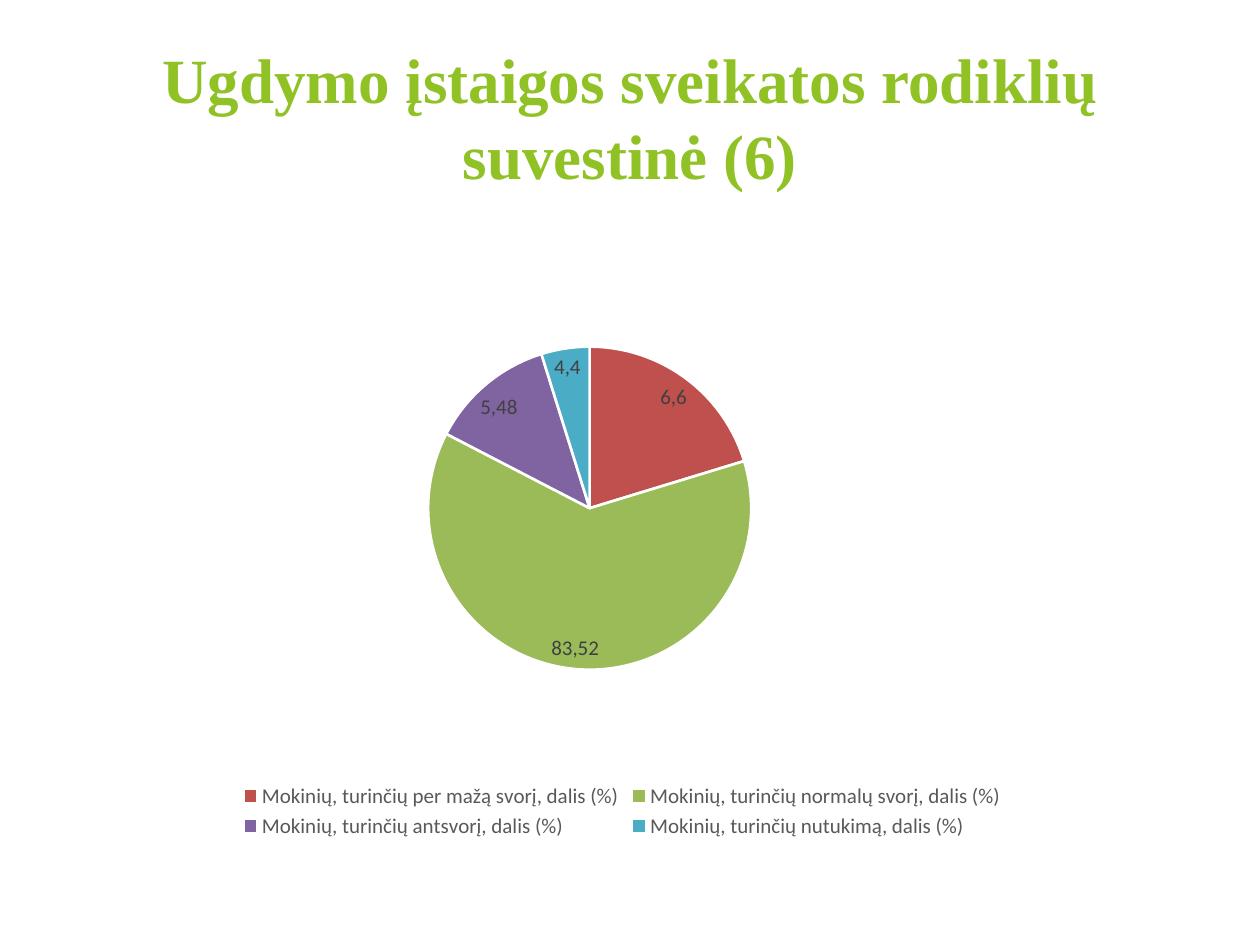
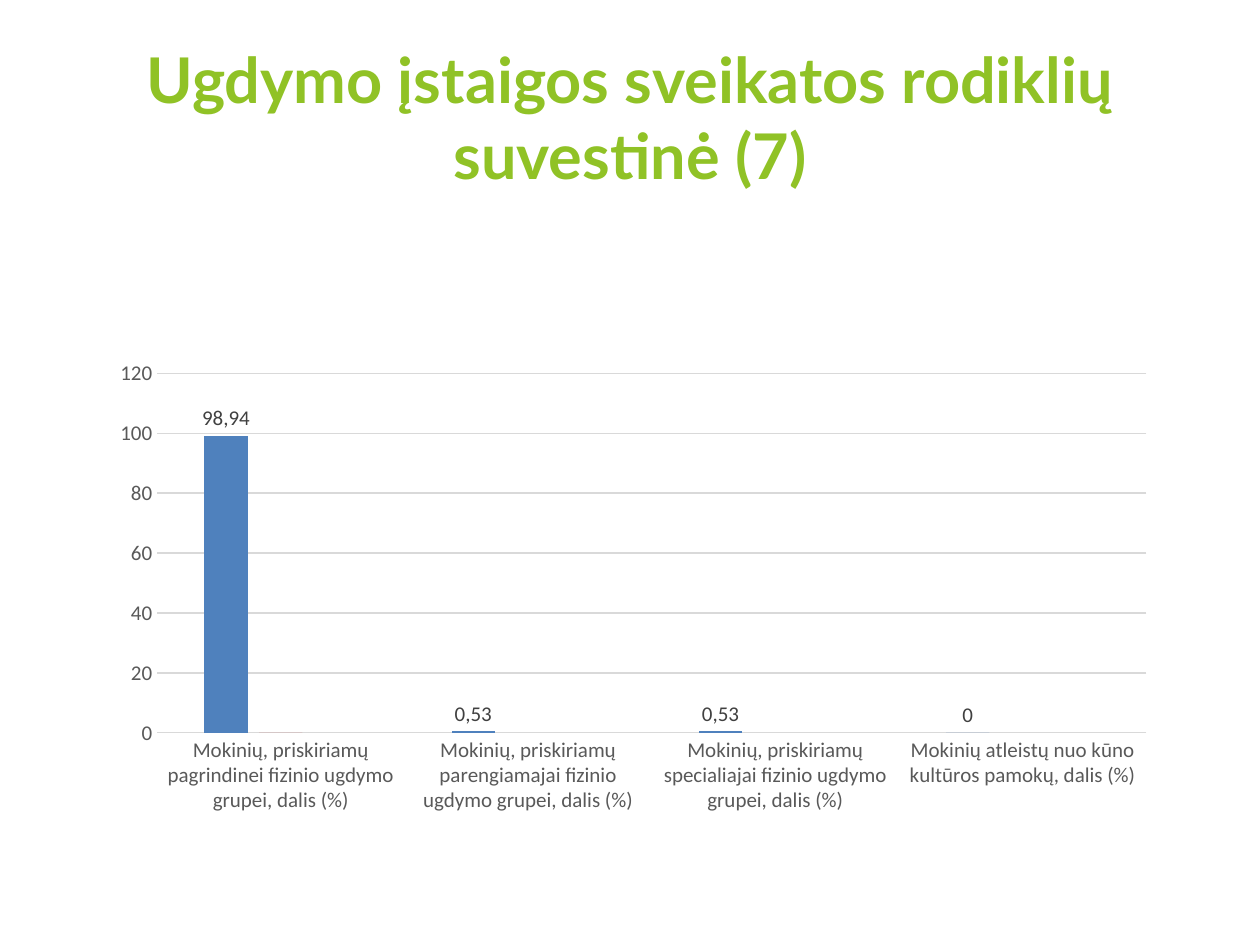
from lxml.etree import SubElement
from pptx import Presentation
from pptx.chart.data import CategoryChartData
from pptx.dml.color import RGBColor
from pptx.enum.chart import XL_CHART_TYPE, XL_LABEL_POSITION, XL_LEGEND_POSITION, XL_TICK_MARK
from pptx.enum.text import MSO_ANCHOR, PP_ALIGN
from pptx.oxml.ns import qn
from pptx.util import Pt

GREEN, WHITE, GRID = "90C226", "FFFFFF", "D9D9D9"
LABEL_TEXT, AXIS_TEXT = "404040", "595959"
BLUE, RED, OLIVE, PURPLE, TEAL = "4F81BD", "C0504D", "9BBB59", "8064A2", "4BACC6"


def color(value):
    return RGBColor.from_string(value)


def set_font(font, name, size, value, bold=False):
    font.name, font.size, font.bold = name, Pt(size), bold
    font.color.rgb = color(value)


presentation = Presentation()
presentation.slide_width, presentation.slide_height = Pt(720), Pt(540)

# Chart data; the pie starts with an empty category
pie_data = CategoryChartData()
pie_data.categories = [""] + [
    f"Mokinių, turinčių {group}, dalis (%)"
    for group in ("per mažą svorį", "normalų svorį", "antsvorį", "nutukimą")
]
pie_data.add_series("Series 1", (None, 20.29, 62.32, 12.56, 4.83))

column_data = CategoryChartData()
column_data.categories = [
    f"Mokinių, priskiriamų {group} fizinio ugdymo grupei, dalis (%)"
    for group in ("pagrindinei", "parengiamajai", "specialiajai")
] + ["Mokinių atleistų nuo kūno kultūros pamokų, dalis (%)"]
column_data.add_series("Series 1", (99.03, 0.48, 0.48, 0))
column_data.add_series("Series 2", (0, None, None, None))
column_data.add_series("Series 3", (None, None, None, None))

# Number, title font, chart type, data, frame, plot area, label position, labels
pages = [
    (6, "Times New Roman", XL_CHART_TYPE.PIE, pie_data,
     (54, 176.7, 603.4, 305.3), (0.316, 0.034, 0.306, 0.677),
     XL_LABEL_POSITION.BEST_FIT, {1: "6,6", 2: "83,52", 3: "5,48", 4: "4,4"}),
    (7, "Lato", XL_CHART_TYPE.COLUMN_CLUSTERED, column_data,
     (54, 171.2, 676.1, 303.1), (0.053, 0.139, 0.836, 0.678),
     XL_LABEL_POSITION.OUTSIDE_END, {0: "98,94", 1: "0,53", 2: "0,53"}),
]

charts = []
for number, title_font, chart_type, data, frame, plot_area, position, labels in pages:
    slide = presentation.slides.add_slide(presentation.slide_layouts[6])

    # Title
    title = slide.shapes.add_textbox(Pt(36), Pt(21.6), Pt(648), Pt(90)).text_frame
    title.word_wrap = True
    title.vertical_anchor = MSO_ANCHOR.MIDDLE
    paragraph = title.paragraphs[0]
    paragraph.text = f"Ugdymo įstaigos sveikatos rodiklių suvestinė ({number})"
    paragraph.alignment = PP_ALIGN.CENTER
    set_font(paragraph.font, title_font, 36, GREEN, bold=True)

    # Chart
    chart = slide.shapes.add_chart(chart_type, *map(Pt, frame), data).chart
    chart.has_title = False
    chart.has_legend = False
    set_font(chart.font, "Calibri", 12, AXIS_TEXT)
    charts.append(chart)

    # Fixed place of the plot inside the chart
    plot_element = chart._chartSpace.chart.plotArea
    for old_layout in plot_element.findall(qn("c:layout")):
        plot_element.remove(old_layout)
    layout = SubElement(plot_element, qn("c:layout"))
    plot_element.insert(0, layout)
    manual = SubElement(layout, qn("c:manualLayout"))
    settings = [("layoutTarget", "inner"), ("xMode", "edge"), ("yMode", "edge")]
    settings += zip("xywh", map(str, plot_area))
    for tag, value in settings:
        SubElement(manual, qn(f"c:{tag}")).set("val", value)

    # Value labels, with their own wording where given
    series = chart.plots[0].series[0]
    data_labels = series.data_labels
    data_labels.show_value = True
    data_labels.position = position
    set_font(data_labels.font, "Calibri", 12, LABEL_TEXT)
    for index, text in labels.items():
        label = series.points[index].data_label
        label_paragraph = label.text_frame.paragraphs[0]
        label_paragraph.text = text
        set_font(label_paragraph.font, "Calibri", 12, LABEL_TEXT)
        label.position = position

pie_chart, column_chart = charts

# Pie: slice colours
pie_chart.plots[0].vary_by_categories = True
for index, value in enumerate((BLUE, RED, OLIVE, PURPLE, TEAL)):
    slice_format = pie_chart.plots[0].series[0].points[index].format
    slice_format.fill.solid()
    slice_format.fill.fore_color.rgb = color(value)
    slice_format.line.color.rgb = color(WHITE)
    slice_format.line.width = Pt(1.5)

# Pie: legend without the empty category
pie_chart.has_legend = True
legend = pie_chart.legend
legend.position = XL_LEGEND_POSITION.BOTTOM
legend.include_in_layout = False
set_font(legend.font, "Calibri", 12, AXIS_TEXT)
empty_entry = SubElement(legend._element, qn("c:legendEntry"))
SubElement(empty_entry, qn("c:idx")).set("val", "0")
SubElement(empty_entry, qn("c:delete")).set("val", "1")
legend._element.find(qn("c:legendPos")).addnext(empty_entry)

# Columns: series colours and spacing
column_plot = column_chart.plots[0]
column_plot.vary_by_categories = False
column_plot.gap_width, column_plot.overlap = 219, -27
for series, value in zip(column_plot.series, (BLUE, RED, OLIVE)):
    series.format.fill.solid()
    series.format.fill.fore_color.rgb = color(value)

# Columns: axes and grid
value_axis, category_axis = column_chart.value_axis, column_chart.category_axis
for axis in (value_axis, category_axis):
    axis.major_tick_mark = axis.minor_tick_mark = XL_TICK_MARK.NONE
    set_font(axis.tick_labels.font, "Calibri", 12, AXIS_TEXT)
value_axis.minimum_scale, value_axis.maximum_scale, value_axis.major_unit = 0, 120, 20
value_axis.format.line.fill.background()
value_axis.has_major_gridlines = True
for line in (category_axis.format.line, value_axis.major_gridlines.format.line):
    line.color.rgb = color(GRID)
    line.width = Pt(0.75)

presentation.save("out.pptx")
